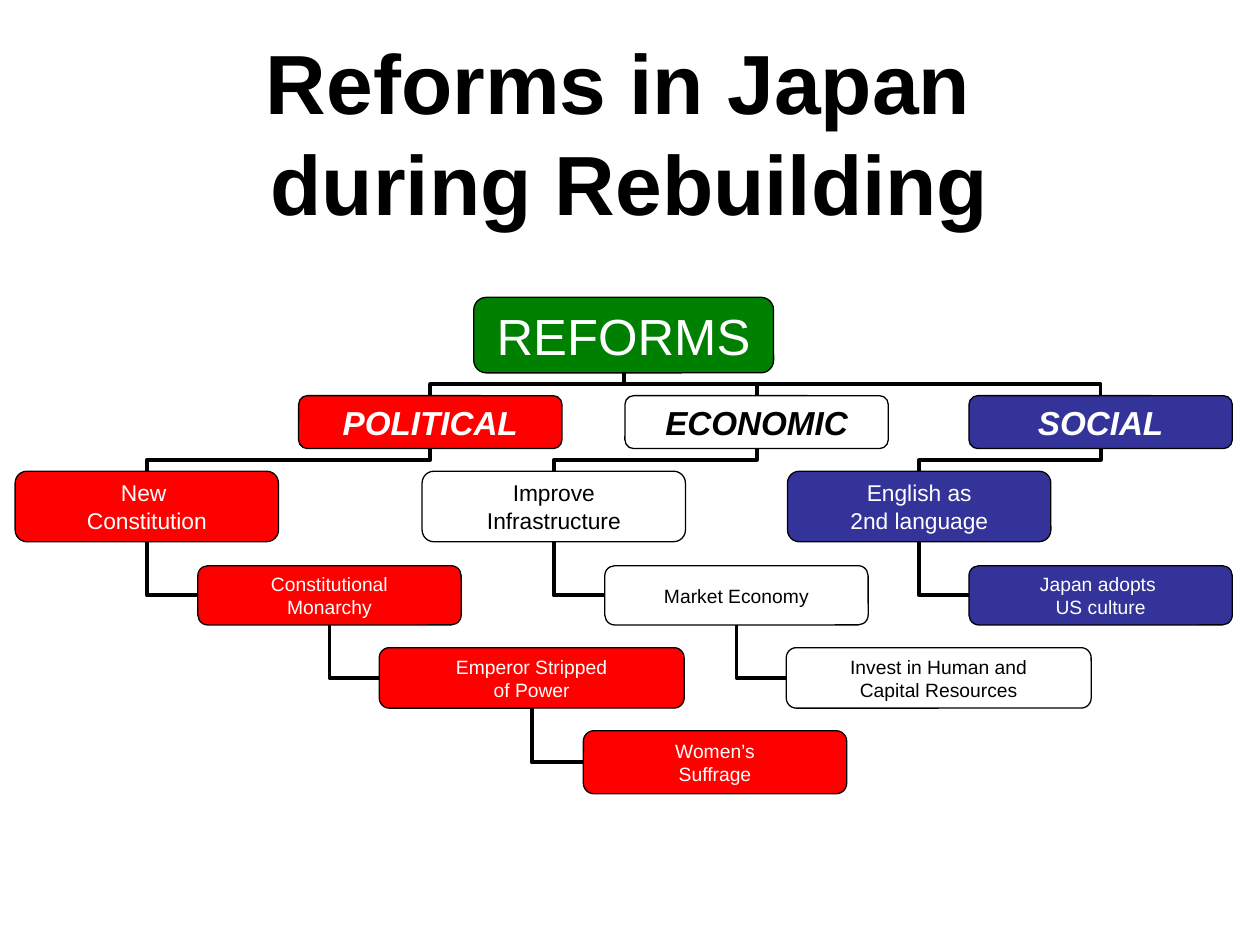
import lxml.etree
import pptx
import pptx.util
import pptx.dml.color
import pptx.enum.shapes
import pptx.enum.text
import pptx.oxml.ns

Inches, Pt = pptx.util.Inches, pptx.util.Pt
qn = pptx.oxml.ns.qn
CENTER = pptx.enum.text.PP_ALIGN.CENTER
MIDDLE = pptx.enum.text.MSO_ANCHOR.MIDDLE
RED, WHITE, BLUE, GREEN, BLACK = "FF0000", "FFFFFF", "333399", "008000", "000000"


def rgb(value):
    return pptx.dml.color.RGBColor.from_string(value)


def write(p, text, color, fmt):
    p.alignment = CENTER
    p.text = text
    for r in p.runs:
        r.font.color.rgb = rgb(color)
        for name, value in fmt.items():
            setattr(r.font, name, value)


prs = pptx.Presentation()
prs.slide_width, prs.slide_height = Inches(10), Inches(7.5)
s = prs.slides.add_slide(prs.slide_layouts[6])

# Title
sp = s.shapes.add_textbox(Inches(0.5), Inches(0.3), Inches(9), Inches(1.48))
tf = sp.text_frame
tf.word_wrap = True
tf.vertical_anchor = MIDDLE
write(tf.paragraphs[0], "Reforms in Japan \vduring Rebuilding", BLACK,
      {"name": "Arial", "size": Pt(48), "bold": True})

# Rows of the chart: top, height, width, inset, text format
rows = [
    (2.36, 0.60, 2.38, 0.06, {"size": Pt(29)}),
    (3.14, 0.42, 2.09, 0.06, {"size": Pt(19), "bold": True, "italic": True}),
    (3.74, 0.56, 2.09, 0.06, {"size": Pt(13)}),
    (4.49, 0.47, 2.09, 0.07, {"size": Pt(11)}),
    (5.14, 0.48, 2.42, 0.07, {"size": Pt(11)}),
    (5.80, 0.50, 2.09, 0.07, {"size": Pt(11)}),
]

# Boxes: name, parent, row, left, fill, lines of text
boxes = [
    ("reforms", None, 0, 3.76, GREEN, ["REFORMS"]),
    ("political", "reforms", 1, 2.37, RED, ["POLITICAL"]),
    ("economic", "reforms", 1, 4.96, WHITE, ["ECONOMIC"]),
    ("social", "reforms", 1, 7.69, BLUE, ["SOCIAL"]),
    ("constitution", "political", 2, 0.12, RED, ["New ", "Constitution"]),
    ("infrastructure", "economic", 2, 3.35, WHITE, ["Improve", "Infrastructure"]),
    ("english", "social", 2, 6.25, BLUE, ["English as", "2nd language"]),
    ("monarchy", "constitution", 3, 1.57, RED, ["Constitutional", "Monarchy"]),
    ("emperor", "monarchy", 4, 3.01, RED, ["Emperor Stripped", "of Power"]),
    ("suffrage", "emperor", 5, 4.63, RED, ["Women’s", "Suffrage"]),
    ("market", "infrastructure", 3, 4.8, WHITE, ["Market Economy"]),
    ("invest", "market", 4, 6.24, WHITE, ["Invest in Human and", "Capital Resources"]),
    ("culture", "english", 3, 7.69, BLUE, ["Japan adopts ", "US culture"]),
]

shapes = {}
for name, parent, row, left, fill, lines in boxes:
    top, height, width, inset, fmt = rows[row]
    sp = s.shapes.add_shape(pptx.enum.shapes.MSO_SHAPE.ROUNDED_RECTANGLE,
                            Inches(left), Inches(top), Inches(width), Inches(height))
    shapes[name] = sp
    sp.shadow.inherit = False
    sp.fill.solid()
    sp.fill.fore_color.rgb = rgb(fill)
    sp.line.color.rgb = rgb(BLACK)
    sp.line.width = Pt(0.75)
    tf = sp.text_frame
    frame = {"word_wrap": False, "vertical_anchor": MIDDLE,
             "margin_left": Inches(inset), "margin_right": Inches(inset),
             "margin_top": Inches(inset / 2), "margin_bottom": Inches(inset / 2)}
    for key, value in frame.items():
        setattr(tf, key, value)
    for i, line in enumerate(lines):
        p = tf.add_paragraph() if i else tf.paragraphs[0]
        write(p, line, BLACK if fill == WHITE else WHITE, {"name": "Arial", **fmt})

# Elbow connectors from each child up to its parent, behind the boxes
for name, parent, row, *_ in boxes:
    if parent is None:
        continue
    child, above = shapes[name], shapes[parent]
    from_top = row < 3
    x1 = child.left + (child.width // 2 if from_top else 0)
    y1 = child.top + (0 if from_top else child.height // 2)
    x2, y2 = above.left + above.width // 2, above.top + above.height
    cn = s.shapes.add_connector(pptx.enum.shapes.MSO_CONNECTOR.ELBOW, x1, y1, x2, y2)
    cn.begin_connect(child, 0 if from_top else 1)
    cn.end_connect(above, 2)
    cn.line.color.rgb = rgb(BLACK)
    cn.line.width = Pt(2.25)

    # The unrotated frame shares its centre with the drawn elbow
    w, h = abs(x2 - x1), abs(y2 - y1)
    rotation, flip = 180, "0"
    if from_top:
        w, h = h, w
        rotation, flip = (270, "0") if x1 < x2 else (90, "1")
    place = {"left": (x1 + x2 - w) // 2, "top": (y1 + y2 - h) // 2,
             "width": w, "height": h, "rotation": rotation}
    for key, value in place.items():
        setattr(cn, key, value)
    pr = cn._element.spPr
    xfrm = pr.find(qn("a:xfrm"))
    xfrm.set("rot", str(rotation * 60000))
    xfrm.set("flipH", flip)
    xfrm.set("flipV", "0")
    if not from_top:
        pr.find(qn("a:prstGeom")).set("prst", "bentConnector2")
    lxml.etree.SubElement(pr, qn("a:effectLst"))
    s.shapes._spTree.insert(2, cn._element)

prs.save("out.pptx")
